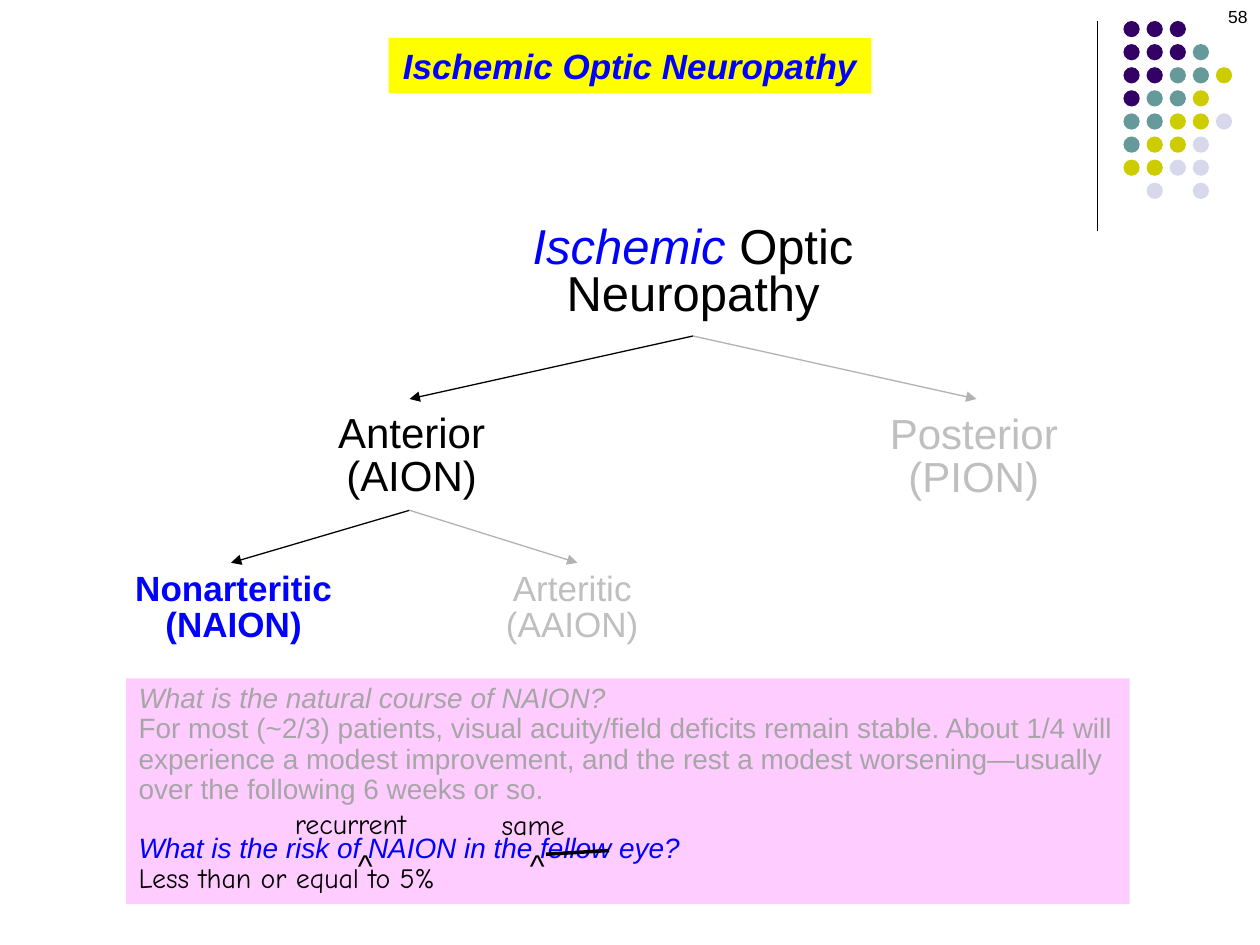
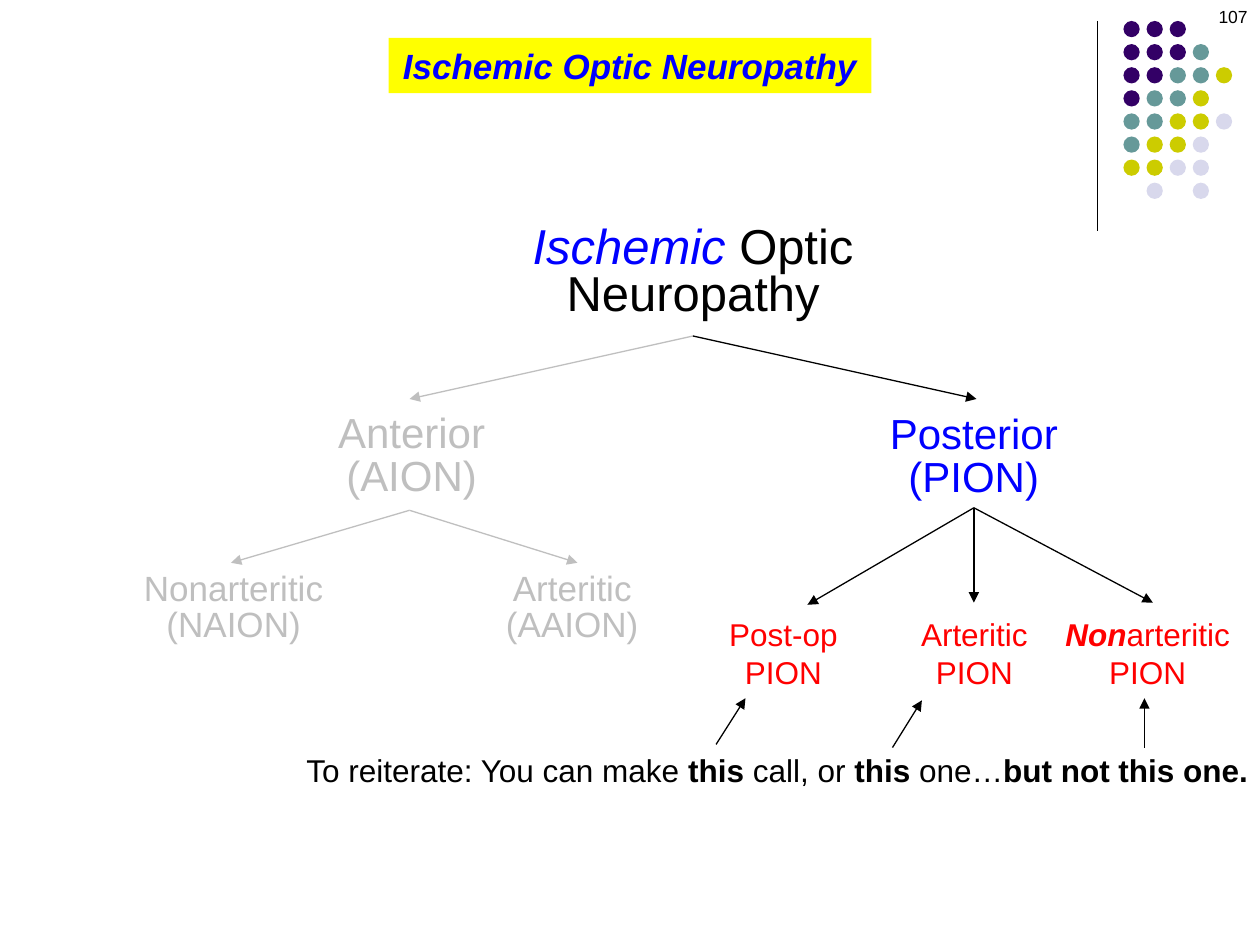
"""Build two decision-tree pages about ischemic optic neuropathy."""
from dataclasses import dataclass
from typing import Optional

from lxml.etree import SubElement
from pptx import Presentation
from pptx.dml.color import RGBColor
from pptx.enum.shapes import MSO_CONNECTOR, MSO_SHAPE
from pptx.enum.text import MSO_ANCHOR, MSO_AUTO_SIZE, PP_ALIGN
from pptx.oxml.ns import qn
from pptx.util import Inches, Length, Pt

COLUMNS, ROWS = 120, 90
WIDTH, HEIGHT = Inches(10), Inches(7.5)


@dataclass(frozen=True)
class Theme:
    black: str = "000000"
    blue: str = "0000FF"
    red: str = "FF0000"
    faded: str = "BFBFBF"
    faded_line: str = "B2B2B2"
    answered: str = "A6A6A6"
    banner: str = "FFFF00"
    panel: str = "FFCCFF"
    dots: tuple = ("330066", "669999", "CCCC00", "D8D8EC")
    font: str = "Arial"
    hand_font: str = "Comic Neue"
    root: int = 28
    branch: int = 24
    leaf: int = 20
    note: int = 18
    body: int = 16
    number: int = 10


THEME = Theme()
DOT_ROWS = ("000", "0001", "00112", "0112", "11223", "1223", "2233", " 3 3")


@dataclass(frozen=True)
class Area:
    column: float
    row: float
    columns: float
    rows: float


@dataclass(frozen=True)
class Span:
    text: str
    color: str = THEME.black
    bold: bool = False
    italic: bool = False
    font: str = THEME.font


@dataclass(frozen=True)
class Label:
    area: Area
    paragraphs: tuple
    size: int
    align: PP_ALIGN = PP_ALIGN.CENTER
    spacing: object = 1.0
    wrap: bool = True


@dataclass(frozen=True)
class Arrow:
    start: tuple
    end: tuple
    color: str = THEME.black
    width: float = 0.75
    head: bool = True


@dataclass(frozen=True)
class Highlight:
    anterior: str
    nonarteritic: str
    posterior: str
    anterior_lines: str
    nonarteritic_line: str
    posterior_line: str
    faded_line: str
    bold_nonarteritic: bool = False


def across(columns: float) -> Length:
    """Turn grid columns into a length."""
    return Length(round(WIDTH * columns / COLUMNS))


def down(rows: float) -> Length:
    """Turn grid rows into a length."""
    return Length(round(HEIGHT * rows / ROWS))


def bounds(area: Area) -> tuple:
    """Give left, top, width and height of a grid area."""
    return across(area.column), down(area.row), across(area.columns), down(area.rows)


def place(shape, area: Area) -> None:
    """Move a placeholder to a grid area."""
    shape.left, shape.top, shape.width, shape.height = bounds(area)


def paint(shape, color: str) -> None:
    """Fill a shape with a plain colour."""
    shape.fill.solid()
    shape.fill.fore_color.rgb = RGBColor.from_string(color)


def write(frame, label: Label) -> None:
    """Write the paragraphs of a label and format their runs."""
    frame.word_wrap = label.wrap
    frame.auto_size = MSO_AUTO_SIZE.NONE
    for index, spans in enumerate(label.paragraphs):
        para = frame.paragraphs[0] if index == 0 else frame.add_paragraph()
        para.alignment = label.align
        para.line_spacing = label.spacing
        para.space_before = Pt(0)
        for span in spans:
            run = para.add_run()
            run.text = span.text
            run.font.name = span.font
            run.font.size = Pt(label.size)
            run.font.bold = span.bold
            run.font.italic = span.italic
            run.font.color.rgb = RGBColor.from_string(span.color)


def add_label(page, label: Label):
    """Add a text box for a label."""
    box = page.shapes.add_textbox(*bounds(label.area))
    write(box.text_frame, label)
    return box


def add_arrow(page, arrow: Arrow, source: Optional[object] = None):
    """Draw a straight line, joined below the source box if one is given."""
    (left, top), (right, bottom) = arrow.start, arrow.end
    line = page.shapes.add_connector(
        MSO_CONNECTOR.STRAIGHT, across(left), down(top), across(right), down(bottom))
    if source is not None:
        line.begin_connect(source, 2)
    line.line.width = Pt(arrow.width)
    line.line.color.rgb = RGBColor.from_string(arrow.color)
    properties = line.element.spPr
    if arrow.head:
        SubElement(properties.find(qn("a:ln")), qn("a:tailEnd"), type="triangle")
    SubElement(properties, qn("a:effectLst"))
    return line


def two_lines(top: str, bottom: str, color: str, bold: bool = False) -> tuple:
    """Give two one-span paragraphs in the same style."""
    return tuple((Span(text, color, bold),) for text in (top, bottom))


def add_heading(page, number: str) -> None:
    """Format the title banner and add the page number."""
    title = page.shapes.title
    area = Area(37, 3.6, 46, 5.28)
    place(title, area)
    paint(title, THEME.banner)
    heading = Span("Ischemic Optic Neuropathy", THEME.blue, bold=True, italic=True)
    write(title.text_frame, Label(area, ((heading,),), THEME.leaf, wrap=False))
    title.text_frame.vertical_anchor = MSO_ANCHOR.MIDDLE
    add_label(page, Label(Area(92, 0, 28, 6), ((Span(number),),), THEME.number, PP_ALIGN.RIGHT))


def add_tree(page, look: Highlight):
    """Draw the shared tree and return its posterior box."""
    root = ((Span("Ischemic", THEME.blue, italic=True), Span(" Optic")), (Span("Neuropathy"),))
    add_label(page, Label(Area(49.5, 21, 33, 10.2), root, THEME.root, spacing=0.8, wrap=False))
    nodes = (
        (Area(31, 38.9, 16.4, 9.4), THEME.branch,
         two_lines("Anterior", "(AION)", look.anterior)),
        (Area(47, 54, 15, 8), THEME.leaf,
         two_lines("Arteritic", "(AAION)", THEME.faded)),
        (Area(11.6, 54, 21.3, 8), THEME.leaf,
         two_lines("Nonarteritic", "(NAION)", look.nonarteritic, look.bold_nonarteritic)),
        (Area(83.5, 39, 18.5, 9.36), THEME.branch,
         two_lines("Posterior", "(PION)", look.posterior)),
    )
    boxes = [add_label(page, Label(area, text, size, spacing=0.85, wrap=False))
             for area, size, text in nodes]
    root_end, anterior_end = (66, 32), (39, 48.6)
    for arrow in (
        Arrow(root_end, (39, 38), look.anterior_lines),
        Arrow(anterior_end, (22, 53.6), look.nonarteritic_line),
        Arrow(anterior_end, (55, 53.6), look.faded_line),
        Arrow(root_end, (93, 38), look.posterior_line),
    ):
        add_arrow(page, arrow)
    return boxes[-1]


def add_questions(page) -> None:
    """Fill the body panel with questions and answers."""
    body = page.placeholders[1]
    area = Area(12, 64.6, 95.6, 21.5)
    place(body, area)
    paint(body, THEME.panel)
    paragraphs = (
        (Span("What is the natural course of NAION?", THEME.answered, italic=True),),
        (Span("For most (~2/3) patients, visual acuity/field deficits remain stable. "
              "About 1/4 will experience a modest improvement, and the rest a modest "
              "worsening—usually over the following 6 weeks or so.", THEME.answered),),
        (Span("What is the risk of NAION in the fellow eye?", THEME.blue, italic=True),),
        (Span("Less than or equal to 5%", font=THEME.hand_font),),
    )
    write(body.text_frame, Label(area, paragraphs, THEME.body, PP_ALIGN.LEFT, 0.9))
    body.text_frame.vertical_anchor = MSO_ANCHOR.TOP
    body.text_frame.paragraphs[2].space_before = Pt(16.5)
    for properties in body.element.iter(qn("a:pPr")):
        properties.set("marL", "0")
        properties.set("indent", "0")
        SubElement(properties, qn("a:buNone"))


def add_corrections(page) -> None:
    """Strike one word and insert two others with carets."""
    add_arrow(page, Arrow((58, 81), (52, 81.36), width=2, head=False))
    for text, area in (("recurrent", Area(26.9, 76.9, 16, 4)), ("same", Area(46.6, 77, 9.5, 4))):
        word = Span(text, font=THEME.hand_font)
        add_label(page, Label(area, ((word,),), THEME.body, PP_ALIGN.LEFT, Pt(15)))
    for column in (49.3, 32.9):
        area = Area(column, 80, 3.8, 4.8)
        add_label(page, Label(area, ((Span("^"),),), THEME.note, PP_ALIGN.LEFT))


def add_posterior_types(page, posterior) -> None:
    """Draw the three posterior types and the closing remark."""
    start = (92.75, 48.36)
    types = (
        (68.2, 12.8, (76.9, 57.6), two_lines("Post-op", "PION", THEME.red)),
        (86.4, 12.8, (92.75, 57.4), ((Span("Arteritic PION", THEME.red),),)),
        (100, 18.6, (109.8, 57.4),
         ((Span("Non", THEME.red, bold=True, italic=True), Span("arteritic", THEME.red)),
          (Span("PION", THEME.red),))),
    )
    for column, columns, tip, text in types:
        add_arrow(page, Arrow(start, tip), posterior)
        add_label(page, Label(Area(column, 58, columns, 8.5), text, THEME.note))
    remark = (Span("To reiterate: You can make "), Span("this", bold=True),
              Span(" call, or "), Span("this", bold=True), Span(" one…"),
              Span("but not this one.", bold=True))
    add_label(page, Label(Area(28, 70.9, 93, 4.8), (remark,), THEME.note, PP_ALIGN.LEFT))
    for foot, tip in (((68.2, 70.9), (71, 66.5)), ((85, 71.2), (87.8, 66.7)),
                      ((109, 71.2), (109, 66.5))):
        add_arrow(page, Arrow(foot, tip))


def decorate_master(deck, page) -> None:
    """Draw the corner rule and dots and hand them to the slide master."""
    rule = add_arrow(page, Arrow((104.5, 2), (104.5, 22), head=False))
    group = page.shapes.add_group_shape()
    for row, codes in enumerate(DOT_ROWS):
        for column, code in enumerate(codes):
            if code != " ":
                area = Area(107 + 2.2 * column, 2 + 2.2 * row, 1.55, 1.55)
                dot = group.shapes.add_shape(MSO_SHAPE.OVAL, *bounds(area))
                paint(dot, THEME.dots[int(code)])
                dot.line.fill.background()
                dot.shadow.inherit = False
    for shape in (rule, group):
        deck.slide_master.shapes.element.append(shape.element)


def main() -> None:
    """Build and save the deck."""
    deck = Presentation()
    deck.slide_width, deck.slide_height = WIDTH, HEIGHT

    course = deck.slides.add_slide(deck.slide_layouts[1])
    add_heading(course, "58")
    add_tree(course, Highlight(THEME.black, THEME.blue, THEME.faded, THEME.black, THEME.black,
                               THEME.faded_line, THEME.faded_line, bold_nonarteritic=True))
    add_questions(course)
    add_corrections(course)
    decorate_master(deck, course)

    types = deck.slides.add_slide(deck.slide_layouts[5])
    add_heading(types, "107")
    posterior = add_tree(types, Highlight(THEME.faded, THEME.faded, THEME.blue, THEME.faded,
                                          THEME.faded, THEME.black, THEME.faded))
    add_posterior_types(types, posterior)
    deck.save("out.pptx")


if __name__ == "__main__":
    main()
